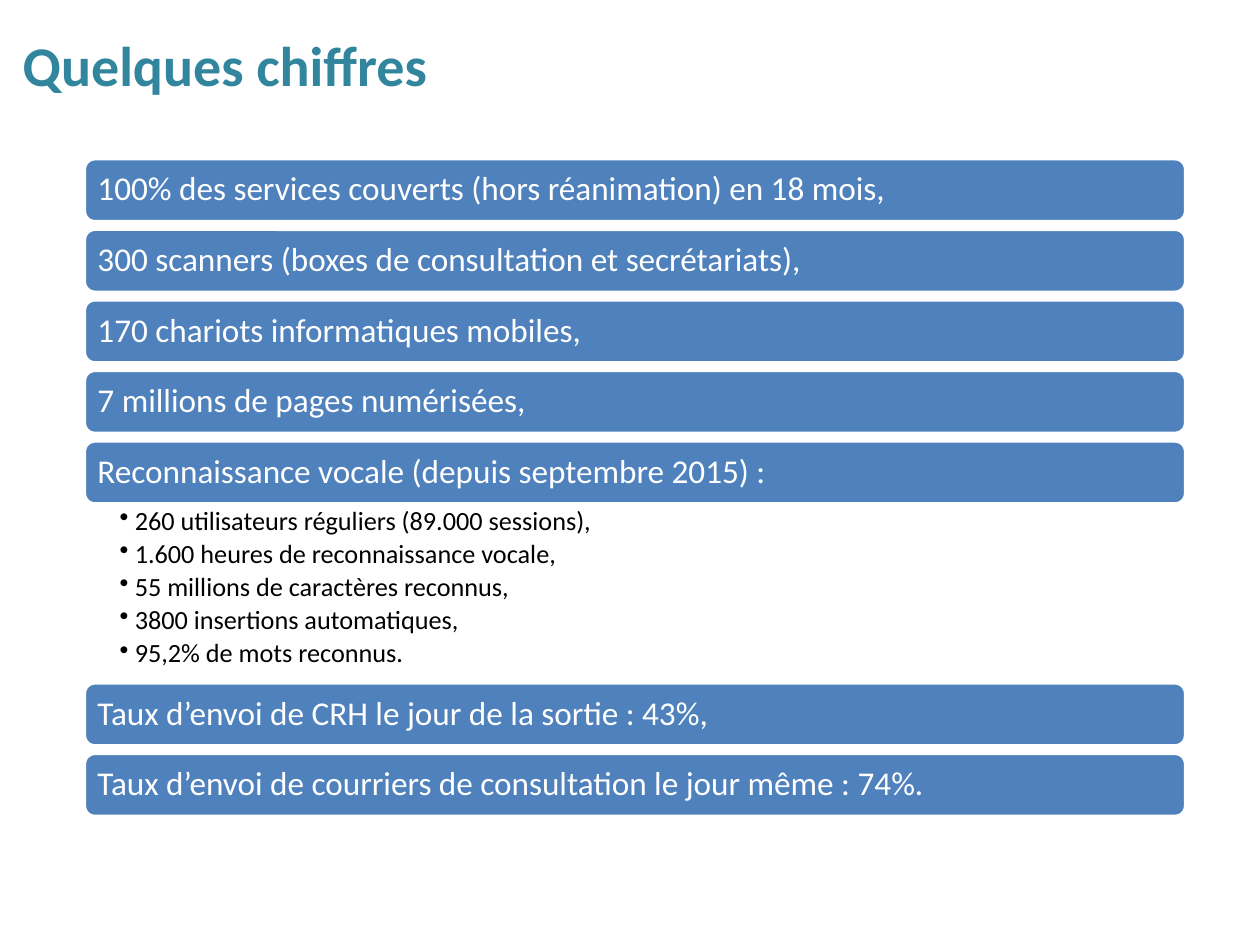
"""Build the key-figures slide: a stack of bars, one of them with a bulleted detail list."""
from dataclasses import dataclass

from lxml import etree
from pptx import Presentation
from pptx import util as u
from pptx.dml.color import RGBColor
from pptx.enum import shapes, text
from pptx.oxml.ns import qn


@dataclass(frozen=True)
class Theme:
    """Colours, font and type sizes of the deck."""
    font: str = "Calibri"
    title: str = "31859C"
    bar: str = "4F81BD"
    light: str = "FFFFFF"
    dark: str = "000000"
    title_size: float = 32
    bar_size: float = 19
    detail_size: float = 15


@dataclass(frozen=True)
class Figure:
    """A headline and the details listed below it."""
    headline: str
    details: tuple[str, ...] = ()


THEME = Theme()
LEFT, WIDTH, FIRST_TOP = 0.67, 8.74, 1.26
BAR_HEIGHT, BAR_GAP, DETAILS_HEIGHT = 0.5, 0.06, 1.42

FIGURES = (
    Figure("100% des services couverts (hors réanimation) en 18 mois,"),
    Figure("300 scanners (boxes de consultation et secrétariats),"),
    Figure("170 chariots informatiques mobiles,"),
    Figure("7 millions de pages numérisées,"),
    Figure("Reconnaissance vocale (depuis septembre 2015) :", (
        "260 utilisateurs réguliers (89.000 sessions),",
        "1.600 heures de reconnaissance vocale,",
        "55 millions de caractères reconnus,",
        "3800 insertions automatiques,",
        "95,2% de mots reconnus.",
    )),
    Figure("Taux d’envoi de CRH le jour de la sortie : 43%,"),
    Figure("Taux d’envoi de courriers de consultation le jour même : 74%."),
)


def set_insets(frame, left: float, top: float, right: float, bottom: float) -> None:
    """Set the inner margins of a text frame in inches."""
    frame.margin_left, frame.margin_top = u.Inches(left), u.Inches(top)
    frame.margin_right, frame.margin_bottom = u.Inches(right), u.Inches(bottom)


def add_bullet(para) -> None:
    """Give a paragraph a round bullet with a hanging indent."""
    properties = para._p.get_or_add_pPr()
    properties.set("marL", str(u.Inches(0.12)))
    properties.set("indent", str(u.Inches(-0.12)))
    etree.SubElement(properties, qn("a:buChar")).set("char", "•")


def write(para, wording: str, *, size: float, color: str, bold: bool = False,
          spacing: float = 0.9, after: float = 0, bullet: bool = False) -> None:
    """Write one formatted, left-aligned paragraph."""
    para.alignment = text.PP_ALIGN.LEFT
    para.line_spacing = spacing
    para.space_after = u.Pt(after)
    if bullet:
        para.level = 1
        add_bullet(para)
    span = para.add_run()
    span.text = wording
    span.font.name = THEME.font
    span.font.size = u.Pt(size)
    span.font.bold = bold
    span.font.color.rgb = RGBColor.from_string(color)


def add_title(page, wording: str) -> None:
    """Place and fill the title placeholder."""
    title = page.shapes.title
    title.left, title.top = u.Inches(0.08), u.Inches(0.08)
    title.width, title.height = u.Inches(9.84), u.Inches(0.86)
    frame = title.text_frame
    frame.vertical_anchor = text.MSO_ANCHOR.MIDDLE
    write(frame.paragraphs[0], wording, size=THEME.title_size, color=THEME.title,
          bold=True, spacing=1.0)


def add_bar(page, headline: str, top: float) -> None:
    """Draw a rounded bar holding a headline."""
    bar = page.shapes.add_shape(
        shapes.MSO_SHAPE.ROUNDED_RECTANGLE,
        u.Inches(LEFT), u.Inches(top), u.Inches(WIDTH), u.Inches(BAR_HEIGHT))
    bar.shadow.inherit = False
    bar.fill.solid()
    bar.fill.fore_color.rgb = RGBColor.from_string(THEME.bar)
    bar.line.color.rgb = RGBColor.from_string(THEME.light)
    bar.line.width = u.Pt(2)
    frame = bar.text_frame
    frame.word_wrap = True
    frame.vertical_anchor = text.MSO_ANCHOR.MIDDLE
    set_insets(frame, 0.08, 0.08, 0.08, 0.08)
    write(frame.paragraphs[0], headline, size=THEME.bar_size, color=THEME.light)


def add_details(page, details: tuple[str, ...], top: float) -> None:
    """Write the bulleted list under a bar."""
    box = page.shapes.add_textbox(
        u.Inches(LEFT), u.Inches(top), u.Inches(WIDTH), u.Inches(DETAILS_HEIGHT))
    frame = box.text_frame
    frame.word_wrap = True
    set_insets(frame, 0.28, 0.03, 0.15, 0.03)
    for index, detail in enumerate(details):
        para = frame.add_paragraph() if index else frame.paragraphs[0]
        write(para, detail, size=THEME.detail_size, color=THEME.dark, after=2.7, bullet=True)


def main() -> None:
    """Build and save the deck."""
    deck = Presentation()
    deck.slide_width, deck.slide_height = u.Inches(10), u.Inches(7.5)
    page = deck.slides.add_slide(deck.slide_layouts.get_by_name("Title Only"))
    add_title(page, "Quelques chiffres")
    top = FIRST_TOP
    for figure in FIGURES:
        add_bar(page, figure.headline, top)
        top += BAR_HEIGHT
        if figure.details:
            add_details(page, figure.details, top)
            top += DETAILS_HEIGHT
        else:
            top += BAR_GAP
    deck.save("out.pptx")


if __name__ == "__main__":
    main()
